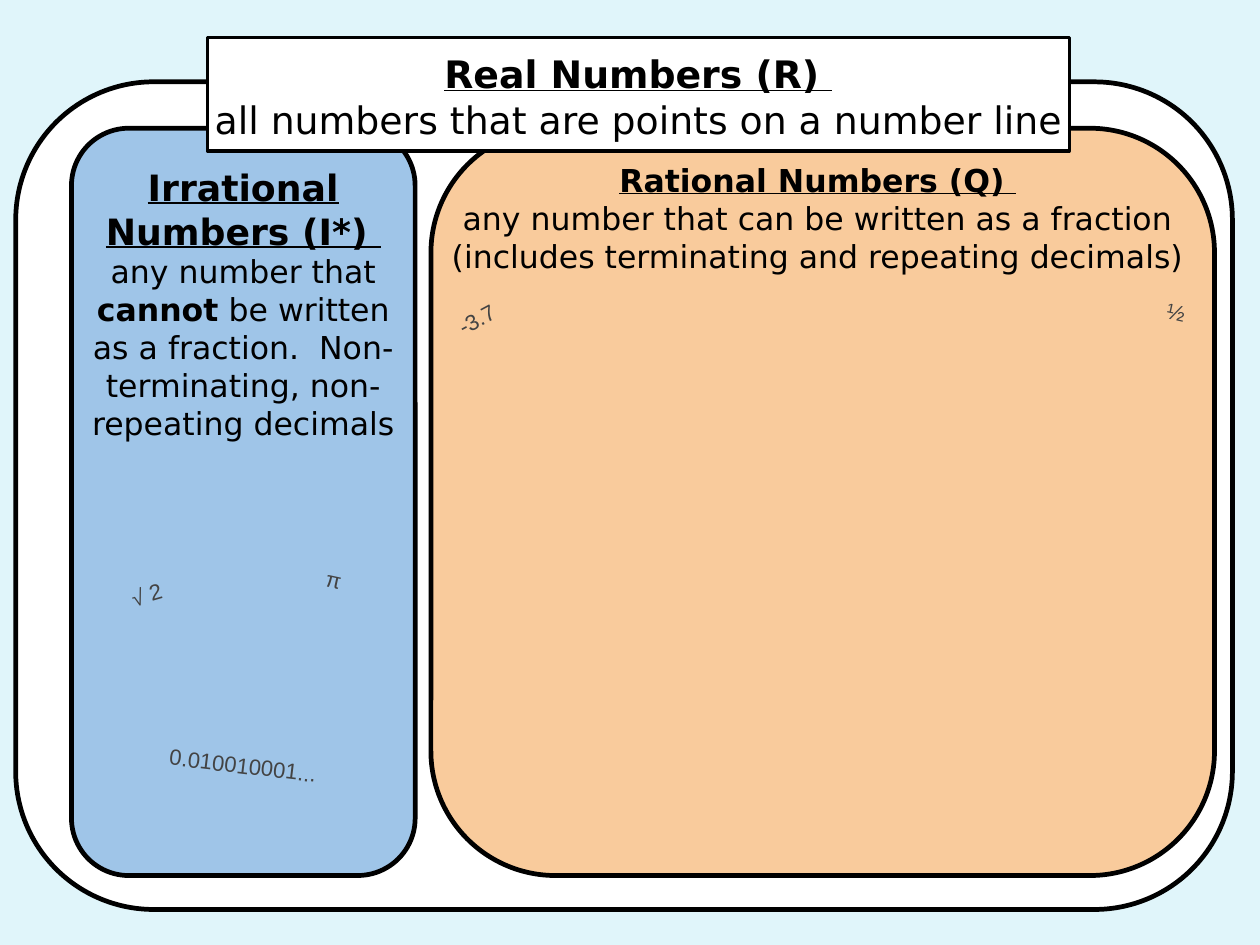
import dataclasses
import pptx
import pptx.dml.color
import pptx.enum.shapes
import pptx.enum.text
import pptx.util

Pt = pptx.util.Pt
Color = pptx.dml.color.RGBColor.from_string
Shape = pptx.enum.shapes.MSO_SHAPE


@dataclasses.dataclass(frozen=True)
class Theme:
    sky: str = "E0F5FA"
    white: str = "FFFFFF"
    black: str = "000000"
    orange: str = "F9CB9C"
    blue: str = "9FC5E8"
    gray: str = "434343"
    text_font: str = "DejaVu Sans"
    example_font: str = "Arial"
    title_size: float = 24
    irrational_size: float = 23
    body_size: float = 20
    example_size: float = 14


theme = Theme()


def add_panel(kind, bounds, fill, line_width):
    panel = page.shapes.add_shape(kind, *map(Pt, bounds))
    panel.shadow.inherit = False
    panel.fill.solid()
    panel.fill.fore_color.rgb = Color(fill)
    panel.line.color.rgb = Color(theme.black)
    panel.line.width = Pt(line_width)


def write(box, bounds, paragraphs, font, color, margins):
    box.left, box.top, box.width, box.height = map(Pt, bounds)
    frame = box.text_frame
    frame.word_wrap = True
    frame.auto_size = pptx.enum.text.MSO_AUTO_SIZE.NONE
    frame.vertical_anchor = pptx.enum.text.MSO_ANCHOR.TOP
    frame.margin_left = frame.margin_right = Pt(margins[0])
    frame.margin_top = frame.margin_bottom = Pt(margins[1])
    for index, spans in enumerate(paragraphs):
        para = frame.add_paragraph() if index else frame.paragraphs[0]
        para.alignment = pptx.enum.text.PP_ALIGN.CENTER
        for text, size, bold, underline in spans:
            span = para.add_run()
            span.text = text
            span.font.name = font
            span.font.size = Pt(size)
            span.font.bold = bold
            span.font.underline = underline
            span.font.color.rgb = Color(color)


deck = pptx.Presentation()
deck.slide_width, deck.slide_height = Pt(800), Pt(600)
page = deck.slides.add_slide(deck.slide_layouts[5])
page.background.fill.solid()
page.background.fill.fore_color.rgb = Color(theme.sky)

panels = [
    (Shape.FLOWCHART_ALTERNATE_PROCESS, (10, 52, 772.5, 525.5), theme.white, 3),
    (Shape.ROUNDED_RECTANGLE, (273.6, 81.4, 497.5, 474.5), theme.orange, 3),
    (Shape.ROUNDED_RECTANGLE, (45.4, 81.4, 218.2, 474.5), theme.blue, 3),
    (Shape.RECTANGLE, (131.8, 23.8, 547.2, 72), theme.white, 2.25),
]
for panel in panels:
    add_panel(*panel)

title = page.shapes.title
page.shapes.element.append(title.element)
size = theme.title_size
write(title, (126.7, 25.2, 557.3, 69.1), [
    [("Real Numbers (R) ", size, True, True)],
    [("all numbers that are points on a number line", size, False, False)],
], theme.text_font, theme.black, (7.2, 7.2))

size = theme.body_size
definitions = [
    ((273.6, 95, 491, 94.3), [
        [("Rational Numbers (Q) ", size, True, True)],
        [("any number that can be written as a fraction "
          "(includes terminating and repeating decimals)", size, False, False)],
    ]),
    ((45.4, 97.9, 218.2, 215.3), [
        [("Irrational Numbers (I*) ", theme.irrational_size, True, True)],
        [("any number that ", size, False, False),
         ("cannot", size, True, False),
         (" be written as a fraction.  Non-terminating, "
          "non-repeating decimals", size, False, False)],
    ]),
]
for bounds, paragraphs in definitions:
    box = page.shapes.add_textbox(*map(Pt, bounds))
    write(box, bounds, paragraphs, theme.text_font, theme.black, (7.2, 7.2))

examples = [
    ("½", (730.1, 185.8, 30.2, 39.6), 12.3),
    ("-3.7", (277.9, 190.1, 52.6, 31), -28.3),
    ("π", (198.7, 355.7, 25.9, 27.4), 12.3),
    ("√ 2", (65.5, 365, 61.2, 45.4), -16.1),
    ("0.010010001...", (56.9, 473.8, 195.1, 21.6), 6.9),
]
for text, bounds, angle in examples:
    box = page.shapes.add_textbox(*map(Pt, bounds))
    write(box, bounds, [[(text, theme.example_size, False, False)]],
          theme.example_font, theme.gray, (7.2, 3.6))
    box.rotation = angle

deck.save("out.pptx")
